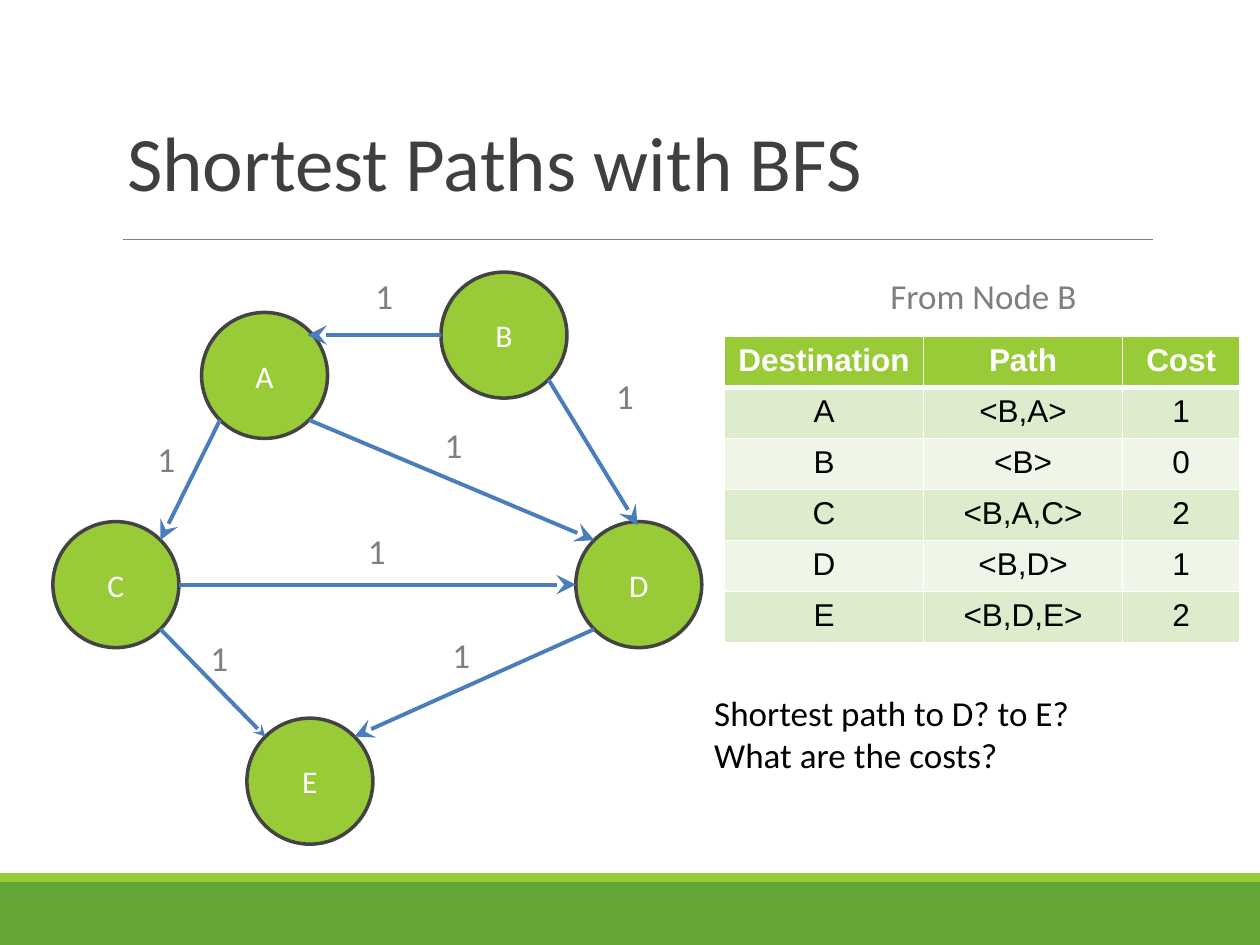
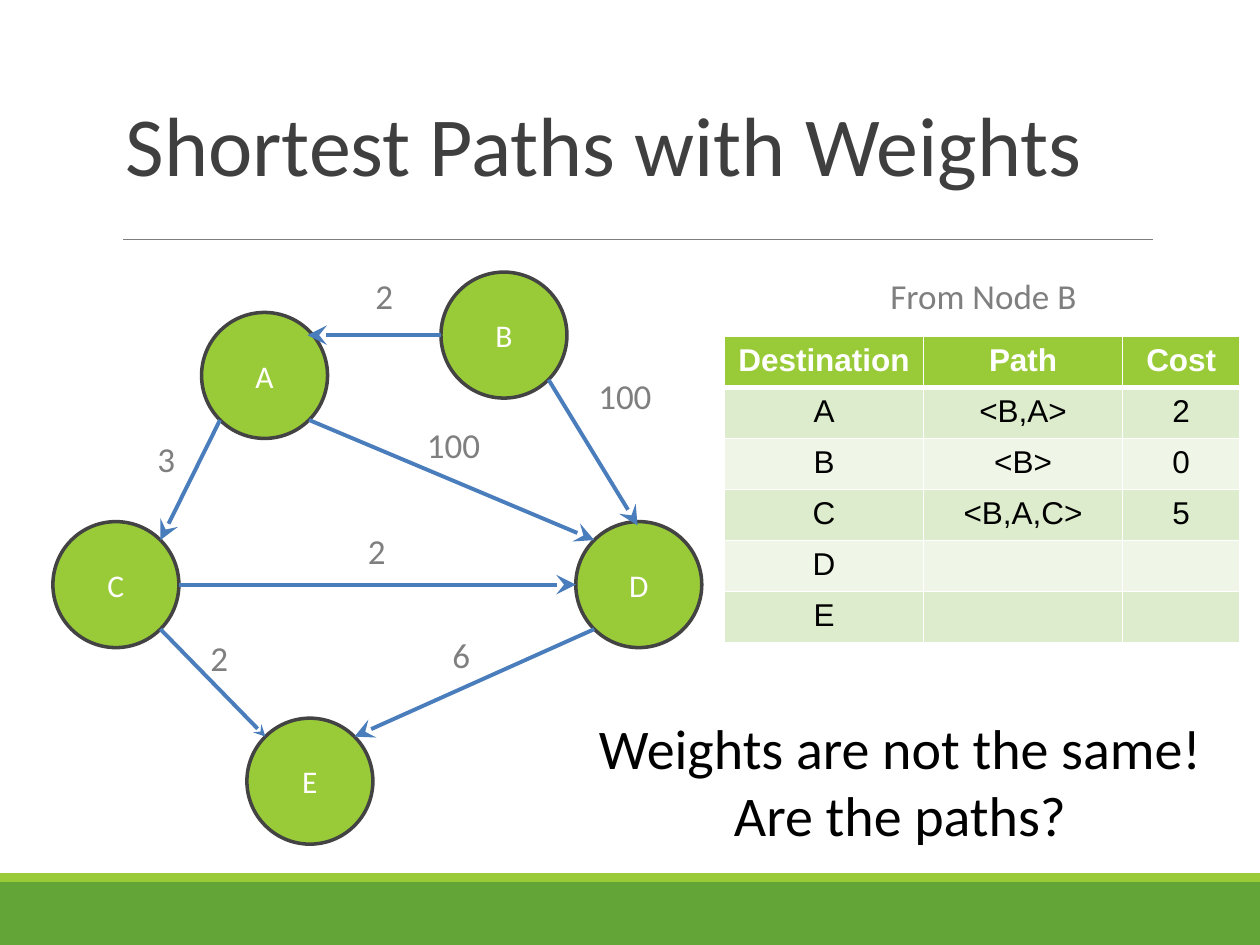
from math import cos, radians, sin

from lxml import etree
from pptx import Presentation
from pptx.dml.color import RGBColor
from pptx.enum.shapes import MSO_CONNECTOR, MSO_SHAPE
from pptx.enum.text import MSO_ANCHOR as ANCHOR, PP_ALIGN as ALIGN
from pptx.oxml.ns import qn
from pptx.util import Inches, Pt

WHITE = RGBColor(0xFF, 0xFF, 0xFF)
BLACK = RGBColor(0x00, 0x00, 0x00)
TITLE_GREY = RGBColor(0x3F, 0x3F, 0x3F)
LABEL_GREY = RGBColor(0x7F, 0x7F, 0x7F)
NODE_LINE = RGBColor(0x43, 0x43, 0x43)
LIME = RGBColor(0x99, 0xCB, 0x38)
GREEN = RGBColor(0x63, 0xA5, 0x37)
EDGE_BLUE = RGBColor(0x4A, 0x7D, 0xBB)
ROW_FILLS = (RGBColor(0xDD, 0xEC, 0xCC), RGBColor(0xEF, 0xF6, 0xE7))

NODE_SIZE = 1
NODES = {"A": (1.6, 2.48), "B": (3.5, 2.16), "C": (0.42, 4.14),
         "D": (4.57, 4.14), "E": (1.96, 5.7)}
TABLE_COLS = (1.58, 1.58, 0.93)
TABLE_HEAD = ("Destination", "Path", "Cost")


def rim(node, degrees):
    """Point on a node's circle; degrees run clockwise from the right."""
    x, y = NODES[node]
    radius, angle = NODE_SIZE / 2, radians(degrees)
    return x + radius + radius * cos(angle), y + radius + radius * sin(angle)


# edge: (from, to, centre of its weight label, arrowhead size)
EDGES = {
    "AC": (rim("A", 135), rim("C", 315), (1.32, 3.64), "lg"),
    "AD": (rim("A", 45), rim("D", 225), (3.6, 3.53), "lg"),
    "DE": (rim("D", 135), rim("E", 315), (3.66, 5.2), "lg"),
    "CE": (rim("C", 45), rim("E", 225), (1.74, 5.22), "med"),
    "CD": (rim("C", 0), rim("D", 180), (2.99, 4.37), "lg"),
    "BD": (rim("B", 45), (5.06, 4.17), (4.96, 3.14), "lg"),
    "BA": (rim("B", 180), (2.44, 2.66), (3.05, 2.35), "lg"),
}


class Deck:
    """Holds the presentation, its style and the slide being built."""

    font = "Calibri"
    table_font = "Arial"

    def __init__(self):
        self.prs = Presentation()
        self.prs.slide_width, self.prs.slide_height = Inches(10), Inches(7.5)
        self.s = None

    def new_slide(self, title, box, size):
        self.s = self.prs.slides.add_slide(self.prs.slide_layouts[6])
        self.shape(MSO_SHAPE.RECTANGLE, (0, 7, 10, 0.5), GREEN)
        self.shape(MSO_SHAPE.RECTANGLE, (0, 6.93, 10, 0.07), LIME)
        self.line((0.98, 1.9), (9.15, 1.9), LABEL_GREY, 0.75)
        tf = self.text(box, [title], size, TITLE_GREY, ALIGN.LEFT)
        tf.vertical_anchor = ANCHOR.BOTTOM
        tf.paragraphs[0].line_spacing = 0.85

    def add_lines(self, tf, lines, size, color, align, font=None, bold=False):
        for i, line in enumerate(lines):
            p = tf.add_paragraph() if i else tf.paragraphs[0]
            p.alignment = align
            r = p.add_run()
            r.text = line
            r.font.name = font or self.font
            r.font.size = Pt(size)
            r.font.bold = bold
            r.font.color.rgb = color

    def text(self, box, lines, size, color, align=ALIGN.CENTER):
        tf = self.s.shapes.add_textbox(*map(Inches, box)).text_frame
        tf.word_wrap = True
        self.add_lines(tf, lines, size, color, align)
        return tf

    def shape(self, kind, box, fill):
        sp = self.s.shapes.add_shape(kind, *map(Inches, box))
        sp.shadow.inherit = False
        sp.fill.solid()
        sp.fill.fore_color.rgb = fill
        sp.line.fill.background()
        return sp

    def node(self, name):
        box = (*NODES[name], NODE_SIZE, NODE_SIZE)
        sp = self.shape(MSO_SHAPE.OVAL, box, LIME)
        sp.line.color.rgb = NODE_LINE
        sp.line.width = Pt(2)
        sp.text_frame.vertical_anchor = ANCHOR.MIDDLE
        self.add_lines(sp.text_frame, [name], 18, WHITE, ALIGN.CENTER)

    def line(self, start, end, color, width, arrow=None):
        ends = map(Inches, (*start, *end))
        cx = self.s.shapes.add_connector(MSO_CONNECTOR.STRAIGHT, *ends)
        cx.line.color.rgb = color
        cx.line.width = Pt(width)
        sp_pr = cx._element.spPr
        if arrow:
            etree.SubElement(sp_pr.find(qn("a:ln")), qn("a:tailEnd"),
                             type="stealth", w=arrow, len=arrow)
        etree.SubElement(sp_pr, qn("a:effectLst"))

    def graph(self, weights):
        for name in NODES:
            self.node(name)
        for edge, (start, end, (x, y), arrow) in EDGES.items():
            self.line(start, end, EDGE_BLUE, 2.25, arrow)
            self.text((x - 0.34, y - 0.22, 0.68, 0.44), [weights[edge]],
                      20, LABEL_GREY)

    def cell_borders(self, cell, bottom):
        tc_pr = cell._tc.get_or_add_tcPr()
        for i, side in enumerate("LRTB"):
            width = bottom if side == "B" else 1
            ln = etree.Element(qn(f"a:ln{side}"), w=str(Pt(width)))
            fill = etree.SubElement(ln, qn("a:solidFill"))
            etree.SubElement(fill, qn("a:srgbClr"), val=str(WHITE))
            tc_pr.insert(i, ln)

    def path_table(self, rows):
        self.text((6.83, 2.13, 1.95, 0.44), ["From Node B"], 20, LABEL_GREY)
        rows = [TABLE_HEAD, *rows]
        box = map(Inches, (5.75, 2.67, sum(TABLE_COLS), 2.43))
        table = self.s.shapes.add_table(len(rows), len(TABLE_COLS), *box).table
        for column, width in zip(table.columns, TABLE_COLS):
            column.width = Inches(width)
        for i, row in enumerate(rows):
            head = i == 0
            for j, value in enumerate(row):
                cell = table.cell(i, j)
                cell.fill.solid()
                cell.fill.fore_color.rgb = LIME if head else ROW_FILLS[(i - 1) % 2]
                self.cell_borders(cell, 3 if head else 1)
                if value:
                    self.add_lines(cell.text_frame, [value], 18,
                                   WHITE if head else BLACK, ALIGN.CENTER,
                                   self.table_font, head)


def main():
    deck = Deck()

    deck.new_slide("Shortest Paths with BFS", (0.91, 0.1, 8.25, 1.59), 44)
    deck.graph(dict.fromkeys(EDGES, "1"))
    deck.path_table([("A", "<B,A>", "1"), ("B", "<B>", "0"),
                     ("C", "<B,A,C>", "2"), ("D", "<B,D>", "1"),
                     ("E", "<B,D,E>", "2")])
    deck.text((5.57, 5.44, 3.76, 0.77),
              ["Shortest path to D? to E?", "What are the costs?"],
              20, BLACK, ALIGN.LEFT)

    deck.new_slide("Shortest Paths with Weights", (0.9, 0.31, 8.25, 1.28), 48)
    deck.graph({"AC": "3", "AD": "100", "DE": "6", "CE": "2",
                "CD": "2", "BD": "100", "BA": "2"})
    deck.path_table([("A", "<B,A>", "2"), ("B", "<B>", "0"),
                     ("C", "<B,A,C>", "5"), ("D", "", ""), ("E", "", "")])
    deck.text((4.52, 5.61, 5.25, 1.18),
              ["Weights are not the same!", "Are the paths?"], 32, BLACK)

    deck.prs.save("out.pptx")


if __name__ == "__main__":
    main()
